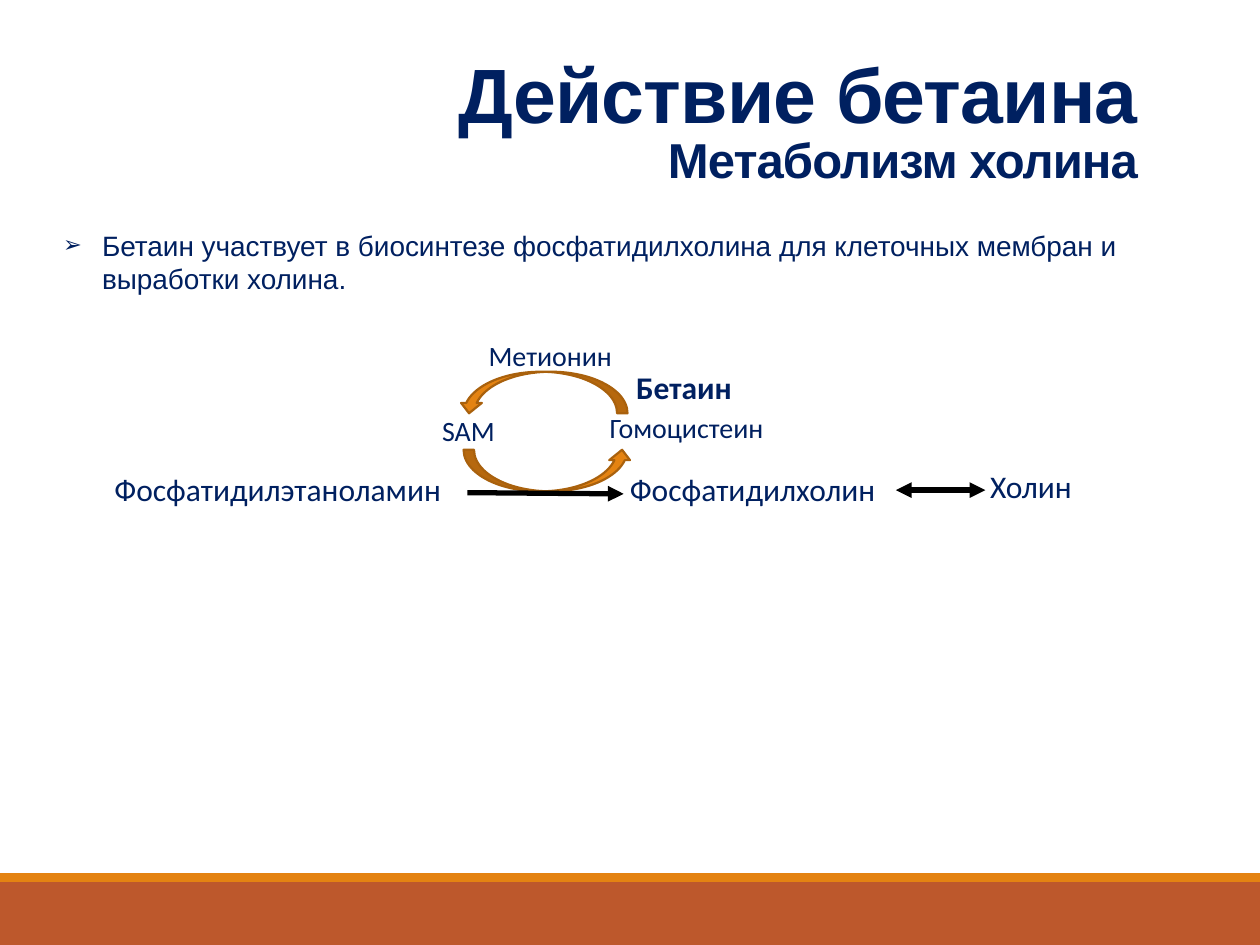
from lxml import etree
from pptx import Presentation
from pptx import util as u
from pptx.dml.color import RGBColor
from pptx.enum import shapes, text
from pptx.oxml.ns import qn

NAVY = RGBColor(0x00, 0x20, 0x60)
ORANGE = RGBColor(0xE4, 0x83, 0x12)
DARK_ORANGE = RGBColor(0xA9, 0x61, 0x0D)
RUST = RGBColor(0xBD, 0x58, 0x2C)
WHITE = RGBColor(0xFF, 0xFF, 0xFF)
BLACK = RGBColor(0x00, 0x00, 0x00)

WIDTH, HEIGHT = 10, 7.5
BAND_TOP = HEIGHT * 14 / 15
STRIPE = 0.07

# Text, left, top, width, height, size, bold
LABELS = [
    ("Фосфатидилэтаноламин", 0.81, 3.68, 3.06, 0.4, 18, False),
    ("Фосфатидилхолин", 4.9, 3.68, 2.32, 0.4, 18, False),
    ("Холин", 7.76, 3.66, 0.9, 0.4, 18, False),
    ("Бетаин", 4.95, 2.87, 1.06, 0.4, 18, True),
    ("SAM", 3.41, 3.23, 0.65, 0.37, 16, False),
    ("Гомоцистеин", 4.74, 3.21, 1.63, 0.37, 16, False),
    ("Метионин", 3.78, 2.64, 1.36, 0.37, 16, False),
]


def place(sp, x, y, w, h):
    sp.left, sp.top, sp.width, sp.height = map(u.Inches, (x, y, w, h))


def add_run(p, words, size, font, bold=False):
    r = p.add_run()
    r.text = words
    r.font.size = u.Pt(size)
    r.font.name = font
    r.font.bold = bold
    r.font.color.rgb = NAVY
    return r


def add_preset(s, kind, box, fill, line=None):
    sp = s.shapes.add_shape(kind, *map(u.Inches, box))
    sp.shadow.inherit = False
    sp.fill.solid()
    sp.fill.fore_color.rgb = fill
    if line is None:
        sp.line.fill.background()
    else:
        sp.line.color.rgb = line
        sp.line.width = u.Pt(1.25)
    return sp


def add_label(s, words, x, y, w, h, size, bold):
    tf = s.shapes.add_textbox(*map(u.Inches, (x, y, w, h))).text_frame
    tf.word_wrap = True
    add_run(tf.paragraphs[0], words, size, "Calibri", bold)


def add_arrow(s, start, end, ends):
    c = s.shapes.add_connector(shapes.MSO_CONNECTOR.STRAIGHT,
                               *map(u.Inches, start + end))
    c.line.color.rgb = BLACK
    c.line.width = u.Pt(3)
    ln = c.line._get_or_add_ln()
    for tag in ends:
        etree.SubElement(ln, qn(tag), type="triangle")
    etree.SubElement(c._element.spPr, qn("a:effectLst"))


def fill_title(sp):
    place(sp, 2.6, 0.3, 6.53, 1.25)
    sp.fill.solid()
    sp.fill.fore_color.rgb = WHITE
    sp.line.color.rgb = WHITE
    sp.line.width = u.Pt(0.75)
    tf = sp.text_frame
    tf.auto_size = text.MSO_AUTO_SIZE.NONE
    tf.vertical_anchor = text.MSO_ANCHOR.BOTTOM
    p = tf.paragraphs[0]
    p.alignment = text.PP_ALIGN.RIGHT
    p.line_spacing = 0.85
    heading = add_run(p, "Действие бетаина", 44, "Arial", True)
    p.add_line_break()
    subheading = add_run(p, "Метаболизм холина", 28, "Arial", True)
    for r in (heading, subheading):
        r.font._element.set("spc", "-50")


def fill_body(sp):
    place(sp, 0.4, 1.76, 9.01, 0.64)
    tf = sp.text_frame
    tf.auto_size = text.MSO_AUTO_SIZE.NONE
    p = tf.paragraphs[0]
    p.space_before = u.Pt(0)
    pPr = p._p.get_or_add_pPr()
    pPr.set("marL", str(u.Inches(0.31)))
    pPr.set("indent", str(u.Inches(-0.31)))
    etree.SubElement(pPr, qn("a:buSzPct"), val="80000")
    etree.SubElement(pPr, qn("a:buChar"), char="➢")
    add_run(p, "Бетаин участвует в биосинтезе фосфатидилхолина для клеточных "
               "мембран и выработки холина.", 16, "Arial")


def main():
    prs = Presentation()
    prs.slide_width, prs.slide_height = u.Inches(WIDTH), u.Inches(HEIGHT)
    s = prs.slides.add_slide(prs.slide_layouts[1])

    # Title and list
    fill_title(s.shapes.title)
    fill_body(s.placeholders[1])

    # Footer bands
    rect = shapes.MSO_SHAPE.RECTANGLE
    add_preset(s, rect, (0, BAND_TOP, WIDTH, HEIGHT - BAND_TOP), RUST)
    add_preset(s, rect, (0, BAND_TOP - STRIPE, WIDTH, STRIPE), ORANGE)

    # Methionine cycle
    for x, y, turn in ((3.68, 3.57, 0), (3.64, 2.95, 180)):
        sp = add_preset(s, shapes.MSO_SHAPE.CURVED_UP_ARROW,
                        (x, y, 1.34, 0.33), ORANGE, DARK_ORANGE)
        sp.rotation = turn

    # Choline pathway
    add_arrow(s, (3.71, 3.91), (4.95, 3.92), ["a:tailEnd"])
    add_arrow(s, (7.11, 3.89), (7.82, 3.89), ["a:headEnd", "a:tailEnd"])

    # Substance names
    for label in LABELS:
        add_label(s, *label)

    prs.save("out.pptx")


if __name__ == "__main__":
    main()
